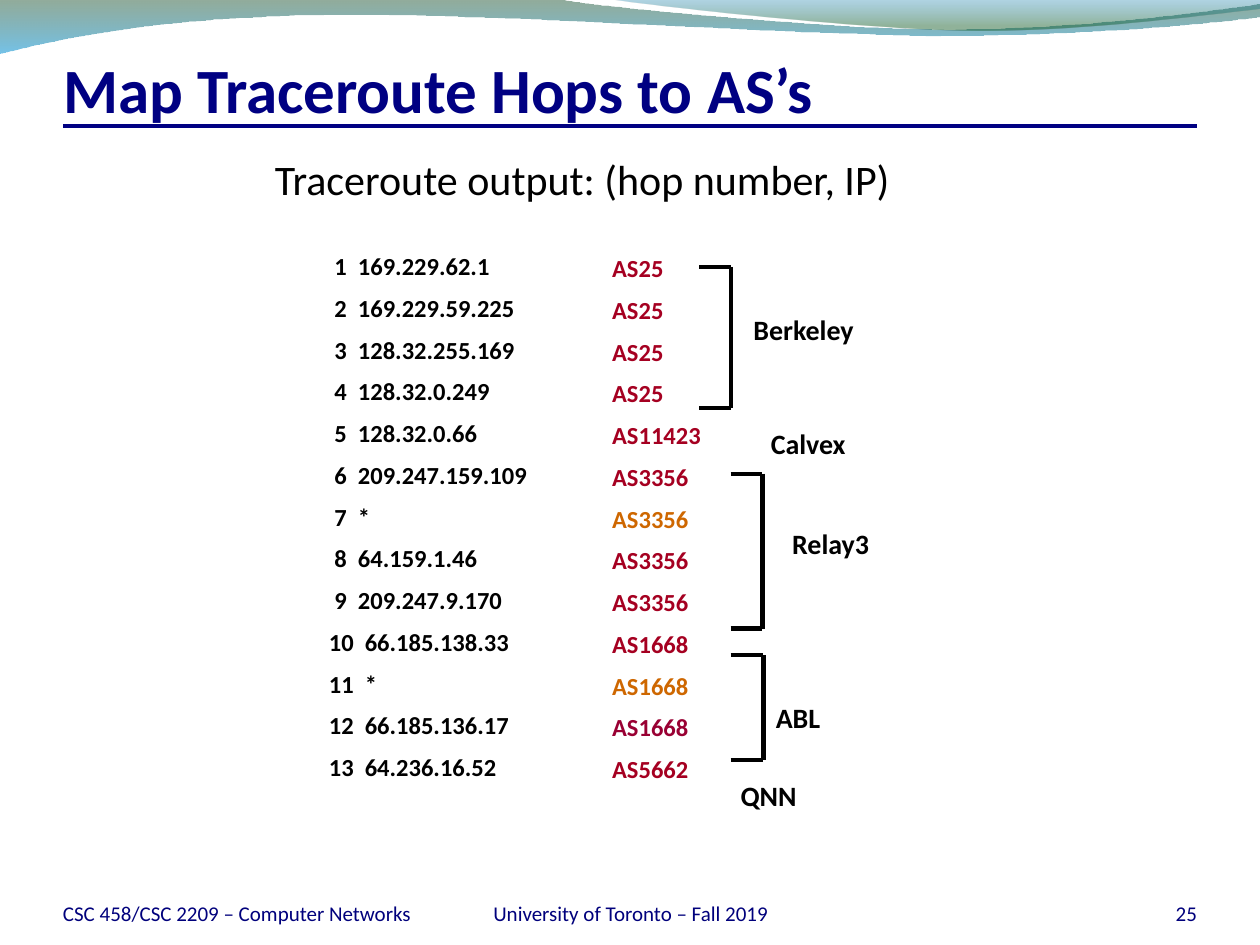
import pptx
import pptx.util
import pptx.dml.color
import pptx.enum.shapes
import pptx.enum.text
import pptx.oxml.ns
import lxml.etree

Cm = pptx.util.Cm
Pt = pptx.util.Pt
ALIGN = pptx.enum.text.PP_ALIGN
ANCHOR = pptx.enum.text.MSO_ANCHOR
qn = pptx.oxml.ns.qn

COLORS = {
    "title": "000082", "footer": "00007C", "text": "000000",
    "known": "A50021", "guessed": "CE6700", "edge": "990033",
    "green": "0F461E", "sky": "0090D6", "blue": "0076AF", "forest": "0D5821",
}


def write(box, place, lines, size, color, bold=False, align=ALIGN.LEFT,
          anchor=ANCHOR.TOP, insets=(0.25, 0.13, 0.25, 0.13)):
    box.left, box.top, box.width, box.height = [Cm(value) for value in place]
    frame = box.text_frame
    frame.word_wrap = True
    frame.auto_size = pptx.enum.text.MSO_AUTO_SIZE.NONE
    frame.vertical_anchor = anchor
    (frame.margin_left, frame.margin_top,
     frame.margin_right, frame.margin_bottom) = [Cm(value) for value in insets]
    for index, line in enumerate(lines):
        para = frame.add_paragraph() if index else frame.paragraphs[0]
        para.alignment = align
        para.line_spacing = 1.0
        para.space_before = Pt(7.05 if index else 0)
        span = para.add_run()
        span.text = line
        span.font.name = "Calibri"
        span.font.size = Pt(size)
        span.font.bold = bold
        span.font.color.rgb = pptx.dml.color.RGBColor.from_string(COLORS[color])


def add_line(page, start, end, color, width):
    line = page.shapes.add_connector(
        pptx.enum.shapes.MSO_CONNECTOR.STRAIGHT,
        Cm(start[0]), Cm(start[1]), Cm(end[0]), Cm(end[1]))
    line.line.color.rgb = pptx.dml.color.RGBColor.from_string(COLORS[color])
    line.line.width = Pt(width)
    lxml.etree.SubElement(line._element.spPr, qn("a:effectLst"))


deck = pptx.Presentation()
deck.slide_width = Cm(25.4)
deck.slide_height = Cm(19.05)
page = deck.slides.add_slide(deck.slide_layouts[3])

waves = [
    ((0, -0.03),
     [(11.18, -0.03),
      (12.09, 0.15, 16.87, 0.58, 19.25, 0.58),
      (21.67, 0.58, 24.33, 0.23, 25.4, 0.08),
      (25.43, 0.33),
      (24.97, 0.41, 22.1, 0.71, 18.95, 0.71),
      (15.8, 0.69, 9.7, 0.25, 6.53, 0.3),
      (3.28, 0.33, 1.17, 0.76, -0.03, 1.07)],
     [(0, "green", 45), (1, "sky", 55)]),
    ((12.17, -0.03),
     [(12.93, 0.1, 17.32, 0.58, 19.53, 0.61),
      (21.74, 0.64, 24.41, 0.28, 25.4, 0.18),
      (25.4, -0.03)],
     [(0, "blue", 30), (0.8, "forest", 45)]),
]
for start, segments, stops in waves:
    outline = page.shapes.build_freeform(Cm(start[0]), Cm(start[1]))
    outline.add_line_segments(
        [(Cm(x), Cm(y)) for segment in segments for x, y in zip(segment[::2], segment[1::2])],
        close=True)
    wave = outline.convert_to_shape()
    corners = iter(list(wave._element.iter(qn("a:lnTo"))))
    for segment in segments:
        corner = next(corners)
        if len(segment) == 6:
            curve = lxml.etree.Element(qn("a:cubicBezTo"))
            corner.addprevious(curve)
            for knot in (corner, next(corners), next(corners)):
                curve.append(knot[0])
                knot.getparent().remove(knot)
    wave.shadow.inherit = False
    wave.line.fill.background()
    wave.fill.gradient()
    wave.fill.gradient_angle = 270
    for stop, (position, color, opacity) in zip(wave.fill.gradient_stops, stops):
        stop.position = position
        stop.color.rgb = pptx.dml.color.RGBColor.from_string(COLORS[color])
        value = stop.color._xFill.find(qn("a:srgbClr"))
        lxml.etree.SubElement(value, qn("a:alpha"), val=str(opacity * 1000))

add_line(page, (1.27, 2.54), (24.13, 2.54), "title", 2.25)
write(page.shapes.title, (1.27, 0.84, 22.86, 1.7), ["Map Traceroute Hops to AS’s"],
      36, "title", True, anchor=ANCHOR.BOTTOM, insets=(0, 0.13, 0, 0))

footers = [
    (1.27, 7.19, "CSC 458/CSC 2209 – Computer Networks", ALIGN.LEFT),
    (8.69, 8.05, "University of Toronto – Fall 2019", ALIGN.CENTER),
    (22.02, 2.11, "25", ALIGN.RIGHT),
]
for left, width, line, align in footers:
    write(page.shapes.add_textbox(0, 0, 0, 0), (left, 17.65, width, 1.02), [line],
          12, "footer", align=align, anchor=ANCHOR.BOTTOM, insets=(0, 0, 0, 0))

write(page.shapes.add_textbox(0, 0, 0, 0), (5.29, 2.97, 13.06, 1.27),
      ["Traceroute output: (hop number, IP)"], 24, "text")

hops = [
    ("169.229.62.1", "AS25", "known"),
    ("169.229.59.225", "AS25", "known"),
    ("128.32.255.169", "AS25", "known"),
    ("128.32.0.249", "AS25", "known"),
    ("128.32.0.66", "AS11423", "known"),
    ("209.247.159.109", "AS3356", "known"),
    ("*", "AS3356", "guessed"),
    ("64.159.1.46", "AS3356", "known"),
    ("209.247.9.170", "AS3356", "known"),
    ("66.185.138.33", "AS1668", "known"),
    ("*", "AS1668", "guessed"),
    ("66.185.136.17", "AS1668", "edge"),
    ("64.236.16.52", "AS5662", "known"),
]
address_list, system_list = page.placeholders[1], page.placeholders[2]
write(address_list, (6.38, 4.93, 7.19, 11.48),
      [f"{number:2}  {address}" for number, (address, system, color) in enumerate(hops, 1)],
      14, "text", True)
write(system_list, (12.09, 4.97, 3.18, 11.48), [system for address, system, color in hops],
      14, "known", True)
for para, (address, system, color) in zip(system_list.text_frame.paragraphs, hops):
    para.runs[0].font.color.rgb = pptx.dml.color.RGBColor.from_string(COLORS[color])
for box in (address_list, system_list):
    for para in box.text_frame.paragraphs:
        properties = para._p.get_or_add_pPr()
        properties.set("marL", str(Cm(1.27)))
        properties.set("indent", str(-Cm(1.27)))
        lxml.etree.SubElement(properties, qn("a:buNone"))

brackets = [
    (14.1, 14.73, 5.38, 8.23),
    (14.73, 15.37, 9.55, 12.67),
    (14.73, 15.39, 13.21, 15.32),
]
for left, right, top, bottom in brackets:
    add_line(page, (left, top), (right, top), "text", 2.5)
    add_line(page, (right, top), (right, bottom), "text", 2.5)
    add_line(page, (left, bottom), (right, bottom), "text", 2.5)

networks = [
    (14.94, 6.17, 2.57, "Berkeley"),
    (15.29, 8.46, 2.01, "Calvex"),
    (15.72, 10.49, 2.2, "Relay3"),
    (15.39, 14, 1.47, "ABL"),
    (14.68, 15.57, 1.75, "QNN"),
]
for left, top, width, name in networks:
    write(page.shapes.add_textbox(0, 0, 0, 0), (left, top, width, 0.94), [name],
          16, "text", True)

deck.save("out.pptx")
